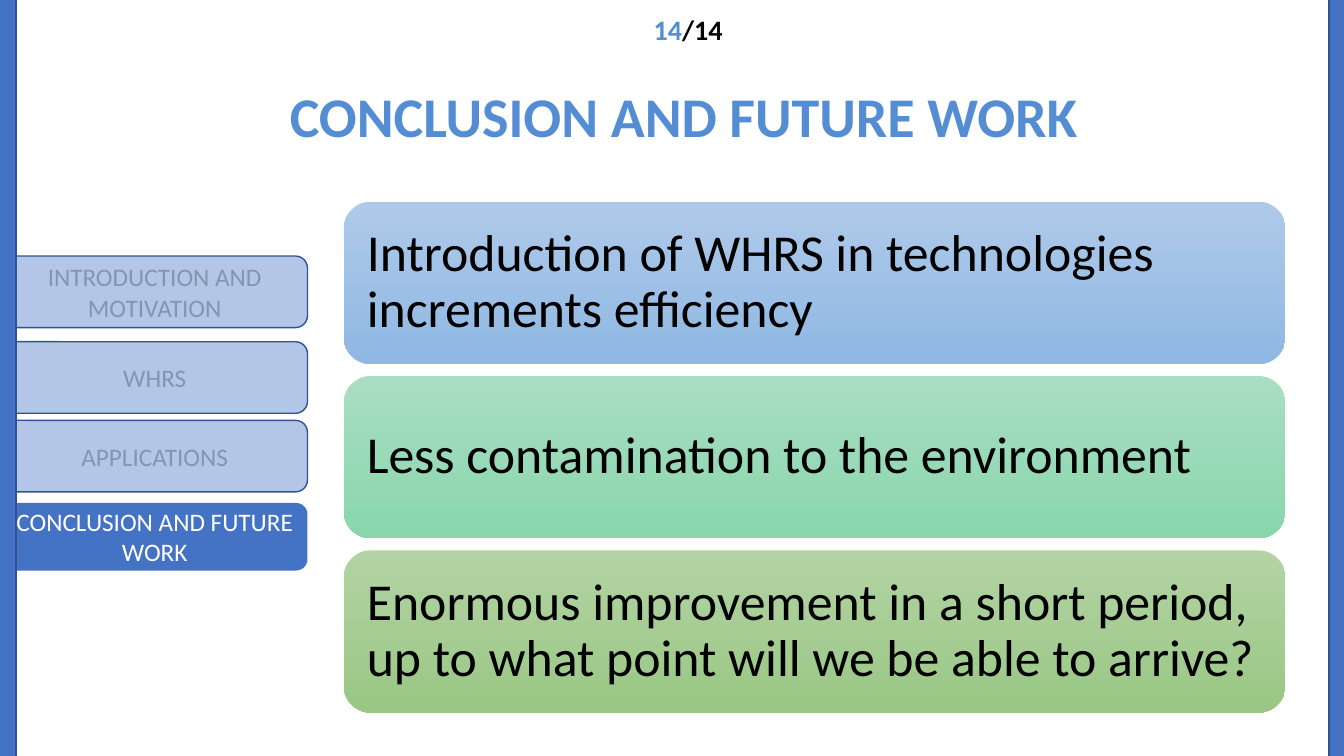
from pptx import Presentation
from pptx.dml.color import RGBColor
from pptx.enum.shapes import MSO_SHAPE
from pptx.enum.text import MSO_ANCHOR, PP_ALIGN
from pptx.util import Emu, Pt

EMU_PER_PX = 9144
SLIDE_WIDTH, SLIDE_HEIGHT = 1333, 750
BLUE, OUTLINE, ACCENT = "4472C4", "31538F", "548DD4"
FADED_FILL, FADED_TEXT = "B3C6E7", "8296B0"
BLACK, WHITE = "000000", "FFFFFF"

TABS = [
    ("INTRODUCTION AND MOTIVATION", 254, 71, False),
    ("WHRS", 339, 71, False),
    ("APPLICATIONS", 417, 71, False),
    ("CONCLUSION AND FUTURE WORK", 499, 67, True),
]
CARD_LEFT, CARD_TOP, CARD_WIDTH, CARD_HEIGHT, CARD_GAP = 341, 200, 934, 161, 12
CARDS = [
    ("Introduction of WHRS in technologies increments efficiency", "AFCAE9", "8FB8E4"),
    ("Less contamination to the environment", "A9DEC2", "89D6AD"),
    ("Enormous improvement in a short period, up to what point will we be able to arrive?",
     "B3D3A4", "9AC784"),
]


def px(length):
    return Emu(length * EMU_PER_PX)


def color(value):
    return RGBColor.from_string(value)


def apply_format(target, values):
    for name, value in values.items():
        setattr(target, name, value)


def write_text(shape, runs, size, bold=False, align=PP_ALIGN.CENTER,
               anchor=MSO_ANCHOR.MIDDLE, inset=(10, 5), line_spacing=None):
    side, end = map(px, inset)
    frame = shape.text_frame
    apply_format(frame, {
        "word_wrap": True, "vertical_anchor": anchor,
        "margin_left": side, "margin_right": side,
        "margin_top": end, "margin_bottom": end,
    })
    paragraph = frame.paragraphs[0]
    apply_format(paragraph, {"alignment": align, "line_spacing": line_spacing})
    for text, text_color in runs:
        run = paragraph.add_run()
        run.text = text
        apply_format(run.font, {"name": "Calibri", "size": Pt(size), "bold": bold})
        run.font.color.rgb = color(text_color)


def add_box(slide, kind, bounds, fill, line=None):
    shape = slide.shapes.add_shape(kind, *map(px, bounds))
    shape.shadow.inherit = False
    if isinstance(fill, tuple):
        shape.fill.gradient()
        shape.fill.gradient_angle = 270
        for stop, stop_color in zip(shape.fill.gradient_stops, fill):
            stop.color.rgb = color(stop_color)
    else:
        shape.fill.solid()
        shape.fill.fore_color.rgb = color(fill)
    if line:
        shape.line.color.rgb = color(line)
        shape.line.width = Pt(1)
    else:
        shape.line.fill.background()
    return shape


def add_label(slide, bounds, runs, size):
    label = slide.shapes.add_textbox(*map(px, bounds))
    write_text(label, runs, size, bold=True, anchor=MSO_ANCHOR.TOP)


def add_tab(slide, text, top, height, active):
    fill, line, text_color = (BLUE, None, WHITE) if active else (FADED_FILL, OUTLINE, FADED_TEXT)
    tab = add_box(slide, MSO_SHAPE.ROUNDED_RECTANGLE, (2, top, 303, height), fill, line)
    write_text(tab, [(text, text_color)], 18)


def add_card(slide, index, text, start_color, end_color):
    top = CARD_TOP + index * (CARD_HEIGHT + CARD_GAP)
    card = add_box(slide, MSO_SHAPE.ROUNDED_RECTANGLE,
                   (CARD_LEFT, top, CARD_WIDTH, CARD_HEIGHT), (start_color, end_color))
    write_text(card, [(text, BLACK)], 37, align=PP_ALIGN.LEFT,
               inset=(15, 15), line_spacing=0.9)


def main():
    presentation = Presentation()
    apply_format(presentation, {"slide_width": px(SLIDE_WIDTH), "slide_height": px(SLIDE_HEIGHT)})
    slide = presentation.slides.add_slide(presentation.slide_layouts[6])

    add_label(slide, (19, 76, 1318, 87), [("CONCLUSION AND FUTURE WORK", ACCENT)], 40)
    for tab in TABS:
        add_tab(slide, *tab)
    for left in (1318, -2):
        add_box(slide, MSO_SHAPE.RECTANGLE, (left, -31, 18, 811), BLUE, OUTLINE)
    add_label(slide, (457, 8, 451, 44), [("14", ACCENT), ("/14", BLACK)], 20)
    for index, card in enumerate(CARDS):
        add_card(slide, index, *card)

    presentation.save("out.pptx")


if __name__ == "__main__":
    main()
